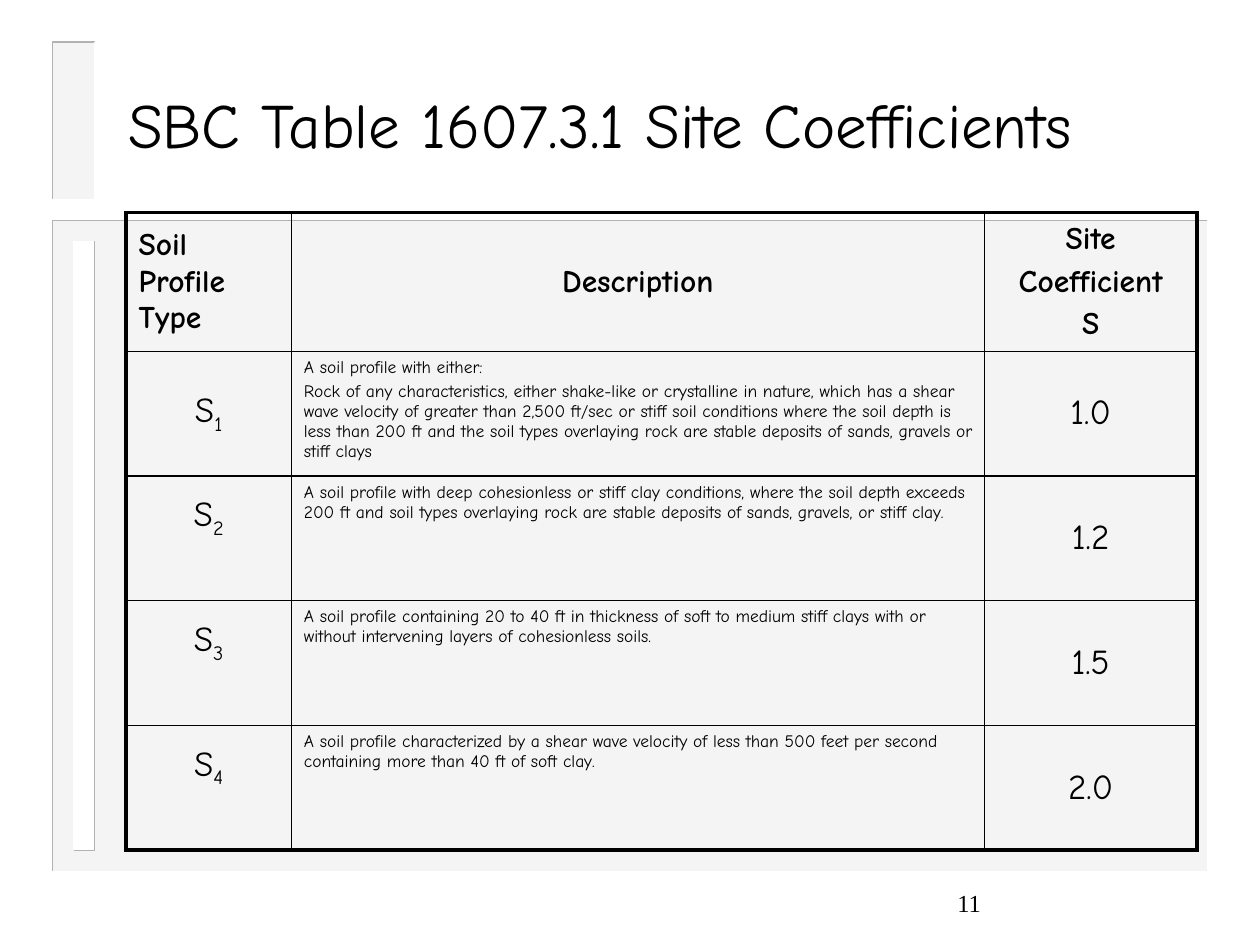
from dataclasses import dataclass

from lxml import etree
from pptx import Presentation
from pptx import util as u
from pptx.dml.color import RGBColor
from pptx.enum import shapes, text
from pptx.oxml.ns import qn

COLUMNS, ROWS = 120, 90  # the slide is a grid of 1/12 inch units


@dataclass(frozen=True)
class Theme:
    font: str = "Comic Neue"
    number_font: str = "Times New Roman"
    ink: str = "000000"
    paper: str = "FFFFFF"
    panel: str = "EAEAEA"
    shade: str = "B2B2B2"
    title: float = 36
    heading: float = 18
    value: float = 20
    note: float = 10
    number: float = 14
    outer_line: float = 2.25
    inner_line: float = 1


THEME = Theme()
HEADINGS = ["Soil Profile Type", "Description", "Site\nCoefficient\nS"]
PROFILES = [
    ("1.0", "A soil profile with either:\n"
            "Rock of any characteristics, either shake-like or crystalline in nature, "
            "which has a shear wave velocity of greater than 2,500 ft/sec or stiff soil "
            "conditions where the soil depth is less than 200 ft and the soil types "
            "overlaying rock are stable deposits of sands, gravels or stiff clays"),
    ("1.2", "A soil profile with deep cohesionless or stiff clay conditions, where the "
            "soil depth exceeds 200 ft and soil types overlaying rock are stable "
            "deposits of sands, gravels, or stiff clay."),
    ("1.5", "A soil profile containing 20 to 40 ft in thickness of soft to medium stiff "
            "clays with or without intervening layers of cohesionless soils."),
    ("2.0", "A soil profile characterized by a shear wave velocity of less than 500 feet "
            "per second containing more than 40 ft of soft clay."),
]
COLUMN_WIDTHS = [15.75, 66, 20.25]
ROW_HEIGHTS = [12.85] + [11.88] * len(PROFILES)


def grid(units):
    return u.Inches(units / 12)


def color(value):
    return RGBColor.from_string(value)


def style_span(span, size, font=THEME.font, bold=False):
    span.font.size = u.Pt(size)
    span.font.name = font
    span.font.bold = bold
    span.font.color.rgb = color(THEME.ink)


def add_edge(page, points, line_color):
    """Open line through the given grid points."""
    start, *others = [(grid(x), grid(y)) for x, y in points]
    builder = page.shapes.build_freeform(*start, scale=1.0)
    builder.add_line_segments(others, close=False)
    edge = builder.convert_to_shape()
    edge.fill.background()
    edge.line.color.rgb = color(line_color)
    edge.line.width = u.Pt(THEME.inner_line)
    edge.shadow.inherit = False


def add_panel(page, left, top, width, height, fill, upper, lower, alpha=None):
    """Rectangle with one colour on its upper left edge, another on its lower right."""
    panel = page.shapes.add_shape(shapes.MSO_SHAPE.RECTANGLE,
                                  *map(grid, (left, top, width, height)))
    panel.shadow.inherit = False
    panel.line.fill.background()
    panel.fill.solid()
    panel.fill.fore_color.rgb = color(fill)
    if alpha:
        swatch = panel._element.spPr.find(qn("a:solidFill"))[0]
        etree.SubElement(swatch, qn("a:alpha"), val=str(alpha * 1000))
    right, bottom = left + width, top + height
    add_edge(page, [(right, top), (left, top), (left, bottom)], upper)
    add_edge(page, [(left, bottom), (right, bottom), (right, top)], lower)


def add_title(page, wording):
    title = page.shapes.title
    title.left, title.top, title.width, title.height = map(grid, (11, 4.5, 102, 14.5))
    frame = title.text_frame
    frame.text = wording
    frame.auto_size = text.MSO_AUTO_SIZE.NONE
    frame.vertical_anchor = text.MSO_ANCHOR.MIDDLE
    frame.paragraphs[0].alignment = text.PP_ALIGN.LEFT
    style_span(frame.paragraphs[0].runs[0], THEME.title)


def add_page_number(page, number):
    box = page.shapes.add_textbox(*map(grid, (90, 83, 25, 6)))
    frame = box.text_frame
    frame.text = number
    frame.word_wrap = True
    frame.vertical_anchor = text.MSO_ANCHOR.MIDDLE
    style_span(frame.paragraphs[0].runs[0], THEME.number, THEME.number_font)


def fill_cell(cell, wording, size, centred=True, middle=True, bold=False):
    cell.text_frame.text = wording
    cell.vertical_anchor = text.MSO_ANCHOR.MIDDLE if middle else text.MSO_ANCHOR.TOP
    for para in cell.text_frame.paragraphs:
        para.alignment = text.PP_ALIGN.CENTER if centred else text.PP_ALIGN.LEFT
        para.space_before = u.Pt(size * 0.2)
        for span in para.runs:
            style_span(span, size, bold=bold)


def add_subscript(cell, wording):
    span = cell.text_frame.paragraphs[0].add_run()
    span.text = wording
    style_span(span, THEME.value)
    span.font._element.set("baseline", "-25000")


def draw_borders(cell, outer_sides):
    """Heavy lines on the outer sides of the table, thin lines elsewhere."""
    properties = cell._tc.get_or_add_tcPr()
    for position, side in enumerate("LRTB"):
        width = THEME.outer_line if side in outer_sides else THEME.inner_line
        line = etree.Element(qn(f"a:ln{side}"), w=str(u.Pt(width)))
        fill = etree.SubElement(line, qn("a:solidFill"))
        etree.SubElement(fill, qn("a:srgbClr"), val=THEME.ink)
        properties.insert(position, line)


def add_coefficient_table(page):
    frame = page.shapes.add_table(
        len(ROW_HEIGHTS), len(COLUMN_WIDTHS), grid(12), grid(20.25),
        grid(sum(COLUMN_WIDTHS)), grid(sum(ROW_HEIGHTS)))
    table = frame.table
    table.first_row = table.horz_banding = False
    for column, width in zip(table.columns, COLUMN_WIDTHS):
        column.width = grid(width)
    for row, height in zip(table.rows, ROW_HEIGHTS):
        row.height = grid(height)

    # Headings
    for index, heading in enumerate(HEADINGS):
        fill_cell(table.cell(0, index), heading, THEME.heading,
                  centred=index > 0, bold=True)

    # One row for each soil profile
    for index, (coefficient, description) in enumerate(PROFILES, start=1):
        label = table.cell(index, 0)
        fill_cell(label, "S", THEME.value)
        add_subscript(label, str(index))
        if index > 1:  # these labels sit above the middle of the row
            label.margin_bottom = grid(4.5)
        fill_cell(table.cell(index, 1), description, THEME.note,
                  centred=False, middle=False)
        fill_cell(table.cell(index, 2), coefficient, THEME.value)

    # Clear fills and borders
    last_row, last_column = len(ROW_HEIGHTS) - 1, len(COLUMN_WIDTHS) - 1
    for y, row in enumerate(table.rows):
        for x, cell in enumerate(row.cells):
            cell.fill.background()
            outer = {"L": x == 0, "R": x == last_column,
                     "T": y == 0, "B": y == last_row}
            draw_borders(cell, [side for side in outer if outer[side]])


def main():
    deck = Presentation()
    deck.slide_width, deck.slide_height = grid(COLUMNS), grid(ROWS)
    page = deck.slides.add_slide(deck.slide_layouts[5])

    # Background panels: body, inset strip, title tab
    raised = (THEME.panel, THEME.shade, THEME.paper, 50)
    add_panel(page, 5, 21, 110, 62, *raised)
    add_panel(page, 7, 23, 2, 58, THEME.paper, THEME.paper, THEME.shade)
    add_panel(page, 5, 4, 4, 15, *raised)

    # Content
    add_page_number(page, "11")
    add_title(page, "SBC Table 1607.3.1 Site Coefficients")
    add_coefficient_table(page)
    deck.save("out.pptx")


if __name__ == "__main__":
    main()
